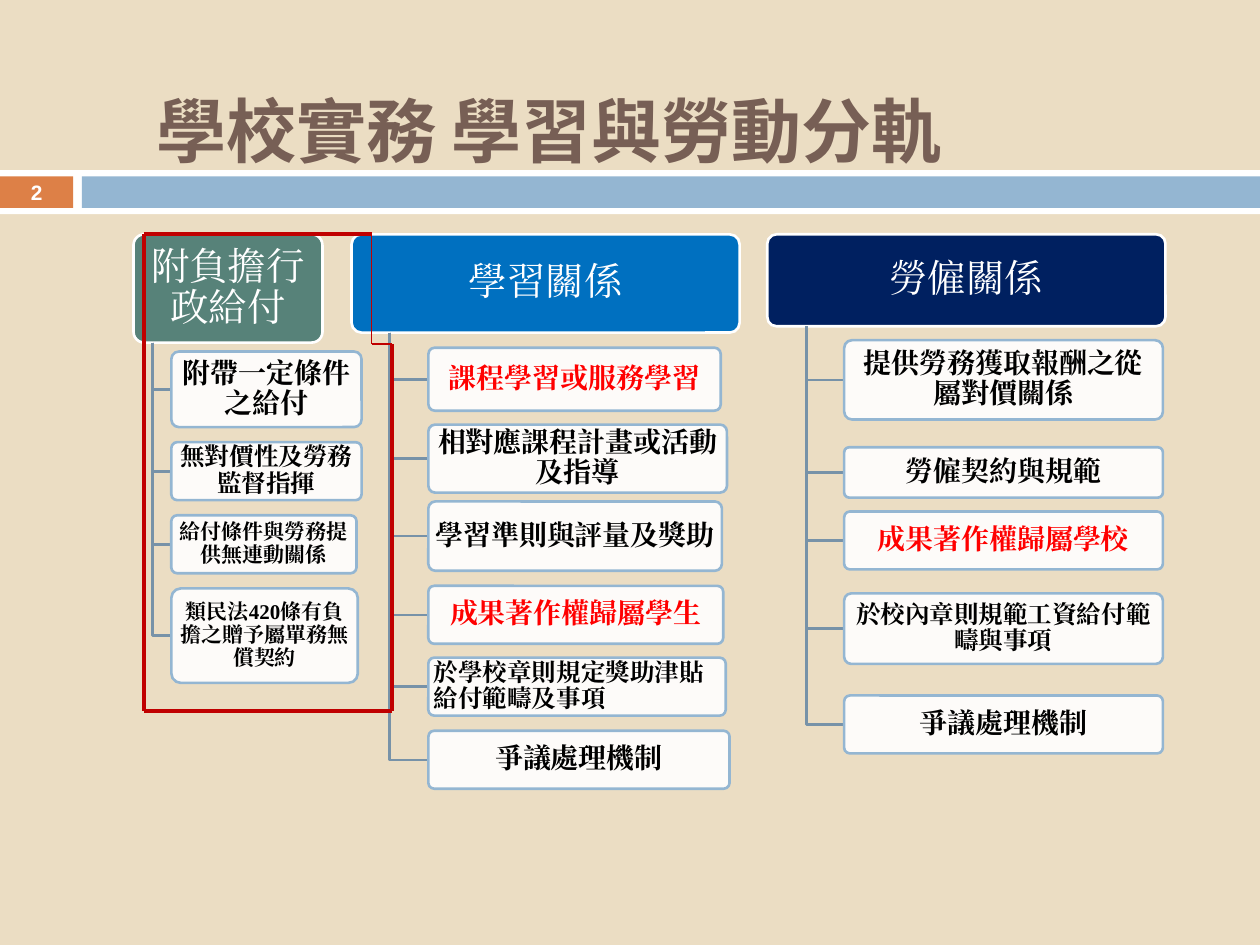
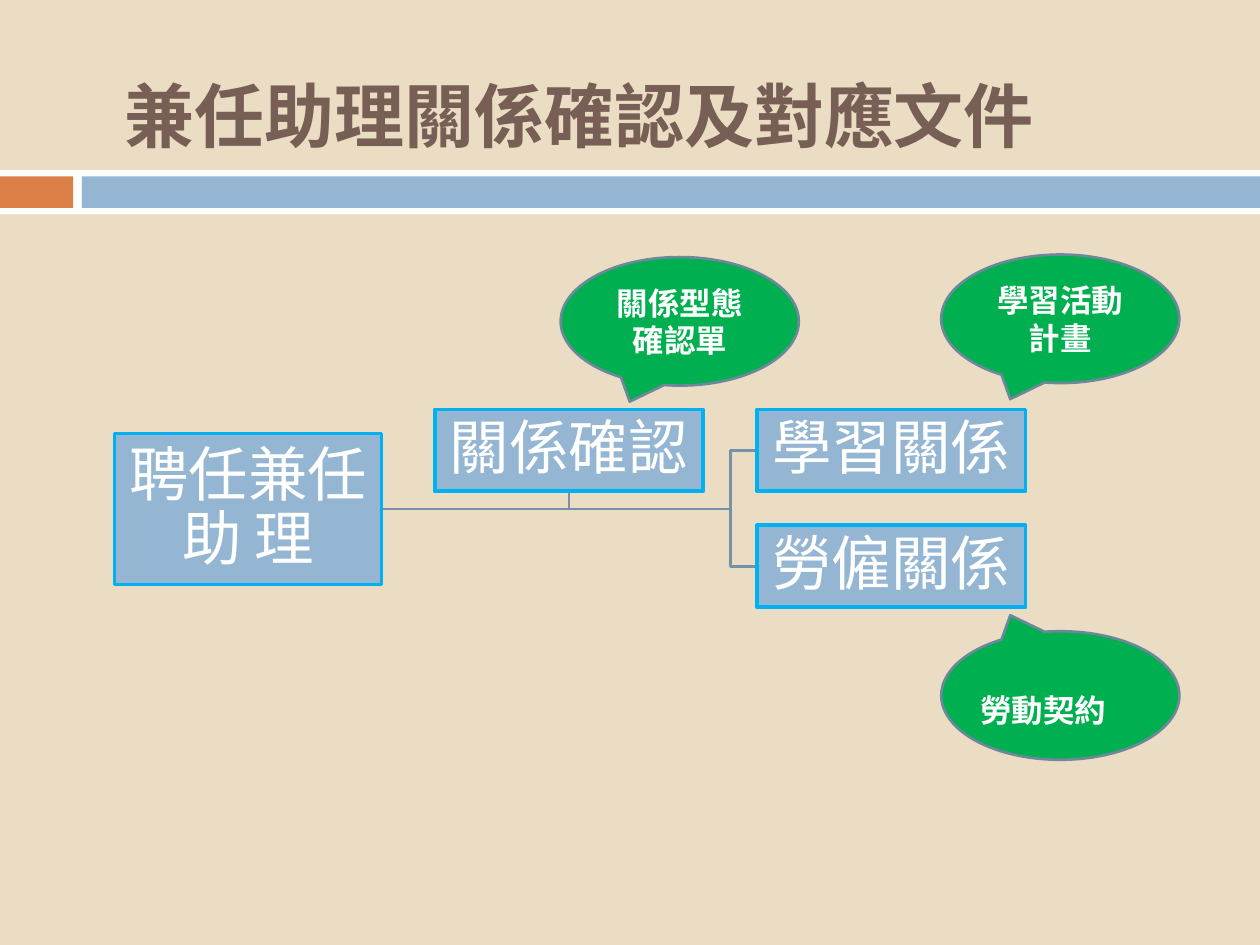
from itertools import pairwise
from lxml.etree import SubElement
from pptx import Presentation
from pptx.dml.color import RGBColor
from pptx.enum.shapes import MSO_CONNECTOR, MSO_SHAPE
from pptx.enum.text import MSO_ANCHOR, MSO_AUTO_SIZE, PP_ALIGN
from pptx.oxml.ns import qn
from pptx.util import Emu, Pt

COLS, ROWS = 100, 75
CELL = 91440
SAND, WHITE, BLACK, RED = "EBDDC3", "FFFFFF", "000000", "FF0000"
BLUE, ORANGE, BROWN, WIRE = "94B6D2", "DD8047", "775F55", "7792A8"
SKY, GREEN, SLATE, CRIMSON = "00B0F0", "00B050", "6D879B", "C00000"
SANS, SERIF = "Noto Sans CJK SC", "Times New Roman"

# Each column: head (text, fill, width, height), box origin, stem, branch, leaves.
TREES = [
    ((10.6, 18.6), ("附負擔行政給付", "578279", 15, 8.6), (1.5, 3), [
        ("附帶一定條件之給付", 16, 9.3, 15.1, 6),
        ("無對價性及勞務監督指揮", 14, 16.5, 15.1, 4.6),
        ("給付條件與勞務提供無連動關係", 12, 22.3, 14.7, 4.6),
        ("類民法420條有負擔之贈予屬單務無償契約", 12, 28.1, 14.8, 7.5)]),
    ((27.9, 18.6), ("學習關係", "0070C0", 30.8, 7.8), (3, 6.1), [
        ("課程學習或服務學習", 16, 9, 23.2, 5, RED),
        ("相對應課程計畫或活動及指導", 16, 15.1, 23.7, 5.4),
        ("學習準則與評量及獎助", 16, 21.2, 23.3, 5.5),
        ("成果著作權歸屬學生", 16, 27.9, 23.4, 4.6, RED),
        ("於學校章則規定獎助津貼給付範疇及事項", 14, 33.6, 23.6, 4.6,
         BLACK, PP_ALIGN.LEFT),
        ("爭議處理機制", 16, 39.4, 23.9, 4.6)]),
    ((60.9, 18.6), ("勞僱關係", "002060", 31.6, 7.3), (3.1, 6.1), [
        ("提供勞務獲取報酬之從屬對價關係", 16, 8.4, 25.3, 6.3),
        ("勞僱契約與規範", 16, 16.9, 25.3, 4),
        ("成果著作權歸屬學校", 16, 22, 25.3, 4.6, RED),
        ("於校內章則規範工資給付範疇與事項", 14, 28.5, 25.3, 5.6),
        ("爭議處理機制", 16, 36.6, 25.3, 4.6)]),
]


def grid(*nums):
    """Turn grid columns or rows into slide lengths."""
    return [Emu(round(num * CELL)) for num in nums]


def paint(part, tone):
    """Give a fill or font colour part one hex colour."""
    if hasattr(part, "solid"):
        part.solid()
        part = part.fore_color
    else:
        part = part.color
    part.rgb = RGBColor.from_string(tone)


def write(shape, text, size, tone, font=SANS, bold=False,
          align=PP_ALIGN.CENTER, pad=None, tight=False):
    """Set and format the text of a shape."""
    frame = shape.text_frame
    frame.text = text
    frame.word_wrap = True
    frame.auto_size = MSO_AUTO_SIZE.NONE
    frame.vertical_anchor = MSO_ANCHOR.MIDDLE
    if pad:
        (frame.margin_left, frame.margin_top,
         frame.margin_right, frame.margin_bottom) = grid(*pad)
    para = frame.paragraphs[0]
    para.alignment = align
    if tight:
        para.line_spacing = 0.9
    for run in para.runs:
        run.font.size, run.font.bold, run.font.name = Pt(size), bold, font
        paint(run.font, tone)
        SubElement(run.font._element, qn("a:ea"), typeface=font)


def block(slide, kind, box, fill, line=None, width=1.5, alpha=None):
    """Draw a filled preset shape in a box."""
    shape = slide.shapes.add_shape(kind, *grid(*box))
    shape.shadow.inherit = False
    paint(shape.fill, fill)
    if alpha:
        tone = shape.fill._xPr.find(".//" + qn("a:srgbClr"))
        SubElement(tone, qn("a:alpha"), val=str(alpha * 1000))
    if line:
        paint(shape.line.fill, line)
        shape.line.width = Pt(width)
    else:
        shape.line.fill.background()
    return shape


def card(slide, box, fill, line, alpha=None):
    """Draw a card with slightly rounded corners."""
    shape = block(slide, MSO_SHAPE.ROUNDED_RECTANGLE, box, fill, line,
                  alpha=alpha)
    shape.adjustments[0] = 0.1
    return shape


def wire(slide, *points):
    """Draw an open bent line through grid points."""
    first, *rest = [grid(*point) for point in points]
    path = slide.shapes.build_freeform(*first, scale=1.0)
    path.add_line_segments(rest, close=False)
    shape = path.convert_to_shape()
    shape.shadow.inherit = False
    shape.fill.background()
    paint(shape.line.fill, WIRE)
    shape.line.width = Pt(1.5)


def theme(deck, layout):
    """Put the background and the bands on the shared layout."""
    paint(layout.background.fill, SAND)
    slide = deck.slides[0]
    bands = [((0, 13.5, COLS, 3.5), WHITE), ((0, 14, 5.8, 2.5), ORANGE),
             ((6.5, 14, 93.5, 2.5), BLUE)]
    for spot, (box, tone) in enumerate(bands, 2):
        band = block(slide, MSO_SHAPE.RECTANGLE, box, tone)
        layout.shapes.element.insert(spot, band.element)


def head(slide, text, box):
    """Move and format the title placeholder."""
    title = slide.shapes.title
    title.left, title.top, title.width, title.height = grid(*box)
    write(title, text, 40, BROWN, bold=True, align=PP_ALIGN.LEFT)


def leaf(slide, box, text, size, tone=BLACK, align=PP_ALIGN.CENTER):
    """Draw one item card."""
    shape = card(slide, box, WHITE, BLUE, 90)
    write(shape, text, size, tone, SERIF, True, align,
          (0.3, 0.3, 0.3, 0.3), True)


def tree(slide, spot, crown, stem, leaves):
    """Draw a headed column whose items hang from one stem."""
    left, top = spot
    text, fill, wide, high = crown
    trunk, branch = left + stem[0], left + stem[0] + stem[1] / 1
    if stem[1] == 3:
        branch = left + stem[1]
    elif stem[1] == 6.1:
        branch = left + stem[1]
    shape = card(slide, (left, top, wide, high), fill, WHITE)
    write(shape, text, 22, WHITE, SERIF, pad=(0.7, 0.4, 0.7, 0.4), tight=True)
    for words, size, down, width, tall, *style in leaves:
        mid = top + down + tall / 2
        wire(slide, (trunk, top + high), (trunk, mid), (branch, mid))
        leaf(slide, (branch, top + down, width, tall), words, size, *style)


def fence(slide, left, top, right, bottom):
    """Draw the stepped red outline around the first column."""
    notch, step = right - 1.6, top + 8.7
    points = [(notch, step), (notch, top), (left, top), (left, bottom),
              (right, bottom), (right, step), (notch, step)]
    widths = [0.79, 2.25, 2.25, 2.25, 2.25, 0.79]
    for (start, end), width in zip(pairwise(points), widths):
        line = slide.shapes.add_connector(
            MSO_CONNECTOR.STRAIGHT, *grid(*start, *end))
        paint(line.line.fill, CRIMSON)
        line.line.width = Pt(width)
        SubElement(line.element.spPr, qn("a:effectLst"))


def tracks(slide):
    """Fill the slide that compares the three columns."""
    head(slide, "學校實務 學習與勞動分軌", (11.4, 5.2, 85.8, 10.2))
    number = slide.shapes.add_textbox(*grid(0, 13.9, 5.8, 2.7))
    write(number, "2", 11.9, WHITE, "Arial", True)
    for part in TREES:
        tree(slide, *part)
    fence(slide, 11.4, 18.6, 31.1, 56.4)


def node(slide, text, box, width=2.25):
    """Draw one box of the flow."""
    shape = block(slide, MSO_SHAPE.RECTANGLE, box, BLUE, SKY, width)
    write(shape, text, 34, WHITE, pad=(0.2, 0.2, 0.2, 0.2), tight=True)


def flow(slide, left, top):
    """Draw the flow from hiring to the two relations."""
    wide, high, gap = 21.3, 6.5, 9.2
    check, fork, ends = left + 25.4, left + 48.9, left + 51
    root, axis = left + 21.2, top + 7.9
    wire(slide, (root, axis), (check + wide / 2, axis),
         (check + wide / 2, top + high))
    for row, text in enumerate(["學習關係", "勞僱關係"]):
        level = top + row * gap
        mid = level + high / 2
        wire(slide, (root, axis), (fork, axis), (fork, mid), (ends, mid))
        node(slide, text, (ends, level, wide, high))
    node(slide, "聘任兼任助 理", (left, axis - 6, 21.2, 12), 1.5)
    node(slide, "關係確認", (check, top, wide, high))


def bubble(slide, text, left, top, tail=0.625, pad=None):
    """Draw a speech bubble with its tail below or above."""
    shape = block(slide, MSO_SHAPE.OVAL_CALLOUT, (left, top, 18.9, 10.2),
                  GREEN, SLATE)
    shape.adjustments[0], shape.adjustments[1] = -0.21, tail
    write(shape, text, 18, WHITE, bold=True, pad=pad)


def papers(slide):
    """Fill the slide that pairs each step with its document."""
    head(slide, "兼任助理關係確認及對應文件", (8.9, 4.4, 90, 9.3))
    flow(slide, 9.1, 32.5)
    bubble(slide, "學習活動計畫", 74.7, 20.2)
    bubble(slide, "關係型態確認單", 44.5, 20.4)
    bubble(slide, "勞動契約", 74.7, 50.1, -0.625, (0, 2.7, 2.7, 0.5))


def main():
    """Build and save the deck."""
    deck = Presentation()
    deck.slide_width, deck.slide_height = grid(COLS, ROWS)
    layout = deck.slide_layouts[5]
    pages = [deck.slides.add_slide(layout) for _ in range(2)]
    theme(deck, layout)
    for fill, slide in zip((tracks, papers), pages):
        fill(slide)
    deck.save("out.pptx")


if __name__ == "__main__":
    main()
